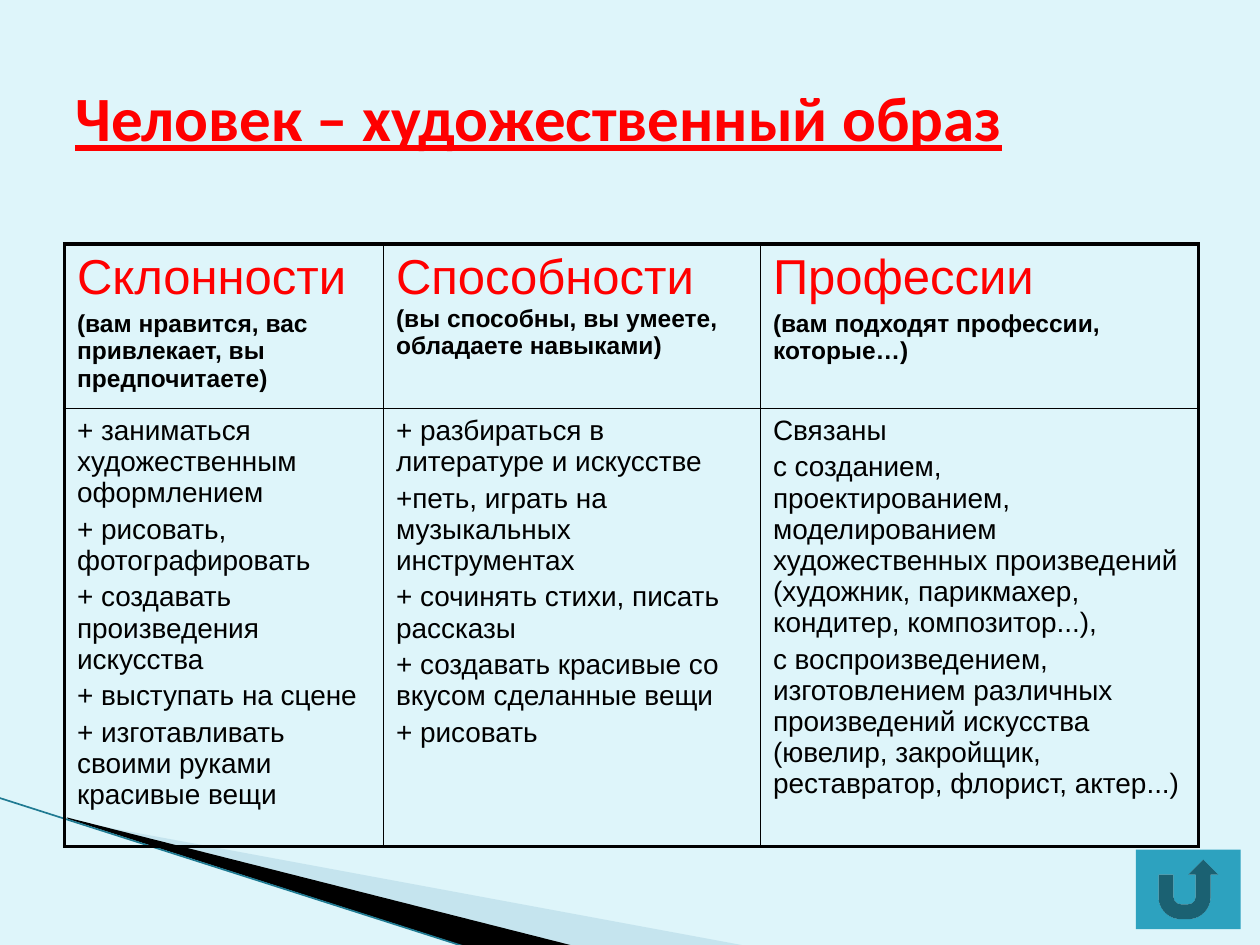
from lxml.etree import SubElement
from pptx import Presentation
from pptx.dml.color import RGBColor
from pptx.enum.shapes import MSO_CONNECTOR, MSO_SHAPE
from pptx.enum.text import MSO_ANCHOR
from pptx.oxml.ns import qn
from pptx.util import Cm, Pt

BACKGROUND = RGBColor(0xDE, 0xF5, 0xFA)
RED = RGBColor(0xFF, 0x00, 0x00)
BLACK = RGBColor(0x00, 0x00, 0x00)
PALE_BLUE = RGBColor(0xA0, 0xCB, 0xDC)
DARK_TEAL = RGBColor(0x1F, 0x7A, 0x92)
TEAL = RGBColor(0x2D, 0xA2, 0xBF)

COLUMN_WIDTHS = [6.43, 7.6, 8.83]
ROW_HEIGHTS = [2.29, 6.27]

HEADINGS = [
    [["Склонности"], ["(вам нравится, вас привлекает, вы предпочитаете)"]],
    [["Способности ", "(вы способны, вы умеете, обладаете навыками)"]],
    [["Профессии"], ["(вам подходят профессии, которые…)"]],
]
DETAILS = [
    [
        "+ заниматься художественным оформлением",
        "+ рисовать, фотографировать",
        "+ создавать произведения искусства",
        "+ выступать на сцене",
        "+ изготавливать своими руками красивые вещи",
    ],
    [
        "+ разбираться в литературе и искусстве",
        "+петь, играть на музыкальных инструментах",
        "+ сочинять стихи, писать рассказы",
        "+ создавать красивые со вкусом сделанные вещи",
        "+ рисовать",
    ],
    [
        "Связаны",
        "с созданием, проектированием, моделированием художественных "
        "произведений (художник, парикмахер, кондитер, композитор...),",
        "с воспроизведением, изготовлением различных произведений искусства "
        "(ювелир, закройщик, реставратор, флорист, актер...)",
    ],
]


class SlideBuilder:
    body_font = "Arial"
    title_font = "Calibri"
    outer_border = Pt(2.25)
    inner_border = Pt(1)
    spacing_share = 0.2

    def __init__(self, slide):
        self.slide = slide
        background = slide.background.fill
        background.solid()
        background.fore_color.rgb = BACKGROUND

    def run(self, paragraph, text, size, color, bold=False, font=body_font):
        run = paragraph.add_run()
        run.text = text
        run.font.name = font
        run.font.size = Pt(size)
        run.font.bold = bold
        run.font.color.rgb = color
        return run

    def title(self, text, left, top, width, height):
        frame = self.slide.shapes.add_textbox(
            Cm(left), Cm(top), Cm(width), Cm(height)).text_frame
        frame.word_wrap = True
        frame.vertical_anchor = MSO_ANCHOR.MIDDLE
        heading = self.run(frame.paragraphs[0], text, 36, RED, True, self.title_font)
        heading.font.underline = True

    def paint(self, shape, color):
        shape.shadow.inherit = False
        shape.fill.solid()
        shape.fill.fore_color.rgb = color
        shape.line.fill.background()

    def wedge(self, points, color, opacity=100):
        corners = [(Cm(x), Cm(y)) for x, y in points]
        outline = self.slide.shapes.build_freeform(*corners[0])
        outline.add_line_segments(corners[1:])
        shape = outline.convert_to_shape()
        self.paint(shape, color)
        if opacity < 100:
            solid = shape.fill._xPr.find(qn("a:solidFill"))
            SubElement(solid[0], qn("a:alpha"), val=str(opacity * 1000))

    def line(self, start, end, color, width):
        line = self.slide.shapes.add_connector(
            MSO_CONNECTOR.STRAIGHT, *map(Cm, start + end))
        line.line.color.rgb = color
        line.line.width = Pt(width)
        SubElement(line._element.spPr, qn("a:effectLst"))

    def button(self, left, top, width, height):
        button = self.slide.shapes.add_shape(
            MSO_SHAPE.ACTION_BUTTON_RETURN, Cm(left), Cm(top), Cm(width), Cm(height))
        self.paint(button, TEAL)

    def borders(self, cell, outer_sides):
        properties = cell._tc.get_or_add_tcPr()
        for side in "LRTB":
            width = self.outer_border if side in outer_sides else self.inner_border
            border = SubElement(properties, qn(f"a:ln{side}"), w=str(int(width)))
            fill = SubElement(border, qn("a:solidFill"))
            SubElement(fill, qn("a:srgbClr"), val=str(BLACK))

    def cell(self, cell, paragraphs, outer_sides):
        self.borders(cell, outer_sides)
        cell.fill.background()
        frame = cell.text_frame
        for index, runs in enumerate(paragraphs):
            paragraph = frame.add_paragraph() if index else frame.paragraphs[0]
            if index:
                paragraph.space_before = Pt(runs[0][1] * self.spacing_share)
            for text, size, color, bold in runs:
                self.run(paragraph, text, size, color, bold)

    def table(self, rows, left, top):
        table = self.slide.shapes.add_table(
            len(rows), len(COLUMN_WIDTHS), Cm(left), Cm(top),
            Cm(sum(COLUMN_WIDTHS)), Cm(sum(ROW_HEIGHTS))).table
        table.first_row = table.horz_banding = False
        for column, width in zip(table.columns, COLUMN_WIDTHS):
            column.width = Cm(width)
        for row, height in zip(table.rows, ROW_HEIGHTS):
            row.height = Cm(height)
        for r, cells in enumerate(rows):
            for c, paragraphs in enumerate(cells):
                edges = {"L": c == 0, "R": c == len(cells) - 1,
                         "T": r == 0, "B": r == len(rows) - 1}
                outer_sides = [side for side, outer in edges.items() if outer]
                self.cell(table.cell(r, c), paragraphs, outer_sides)


def heading_runs(heading):
    first = heading[0][0]
    return [[(text, 28, RED, False) if text == first else (text, 14, BLACK, True)
             for text in paragraph] for paragraph in heading]


def detail_runs(lines):
    return [[(text, 16, BLACK, False)] for text in lines]


def main():
    presentation = Presentation()
    presentation.slide_width = Cm(25.4)
    presentation.slide_height = Cm(19.05)
    builder = SlideBuilder(presentation.slides.add_slide(presentation.slide_layouts[6]))

    builder.wedge([(1.4, 16.54), (15.11, 19.08), (11.58, 19.08), (1.4, 16.51)],
                  PALE_BLUE, 40)
    builder.wedge([(1.35, 16.48), (11.61, 19.08), (9.45, 19.1), (1.37, 16.51)], BLACK)
    builder.line((-0.03, 16.08), (9.42, 19.1), DARK_TEAL, 0.95)
    builder.title("Человек – художественный образ", 1.27, 0.76, 22.86, 3.18)
    builder.table([[heading_runs(heading) for heading in HEADINGS],
                   [detail_runs(lines) for lines in DETAILS]], 1.3, 4.92)
    builder.button(22.9, 17.13, 2.11, 1.6)

    presentation.save("out.pptx")


if __name__ == "__main__":
    main()
